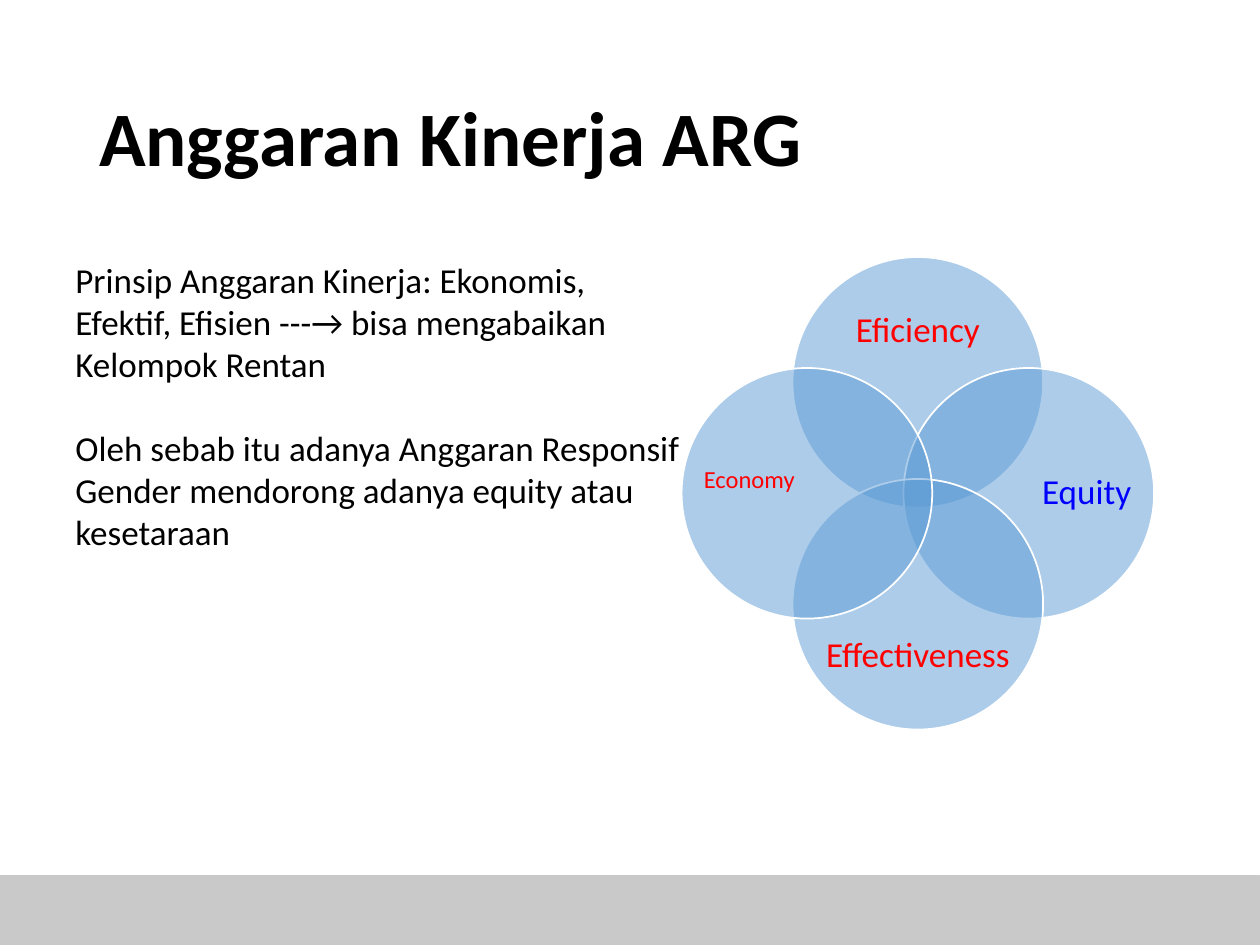
from pptx import Presentation
from pptx.util import Pt
from pptx.dml.color import RGBColor
from pptx.enum.shapes import MSO_SHAPE as Shape
from pptx.enum.text import MSO_ANCHOR as Anchor, PP_ALIGN as Align
from lxml.etree import SubElement


def paint(item, color):
    item.fill.solid()
    item.fill.fore_color.rgb = RGBColor.from_string(color)


def write(x, y, w, h, lines, size, color, anchor=Anchor.MIDDLE):
    box = slide.shapes.add_textbox(Pt(x), Pt(y), Pt(w), Pt(h))
    frame = box.text_frame
    frame.word_wrap = True
    frame.vertical_anchor = anchor
    frame.text = "\n".join(lines)
    for para in frame.paragraphs:
        para.font.name = "Calibri"
        para.font.size = Pt(size)
        paint(para.font, color)
    return frame


deck = Presentation()
deck.slide_width, deck.slide_height = Pt(720), Pt(540)
slide = deck.slides.add_slide(deck.slide_layouts[6])

mid_x, mid_y, step, size = 524.5, 281.9, 63.4, 143.2
circles = [
    ("Eficiency", 0, -1, 20, "FF0000", 0, -92.9, 110, 45),
    ("Equity", 1, 0, 20, "0000FF", 96.5, 0, 55.4, 110),
    ("Effectiveness", 0, 1, 20, "FF0000", 0, 92.9, 110, 45),
    ("Economy", -1, 0, 14, "FF0000", -96.3, -7.5, 55, 110),
]
for name, col, row, pts, color, dx, dy, w, h in circles:
    disc = slide.shapes.add_shape(
        Shape.OVAL, Pt(mid_x + col * step - size / 2),
        Pt(mid_y + row * step - size / 2), Pt(size), Pt(size))
    disc.shadow.inherit = False
    paint(disc, "5B9BD5")
    tint = disc.fill._xPr.find(".//{*}srgbClr")
    SubElement(tint, tint.tag.replace("srgbClr", "alpha"), val="50000")
    paint(disc.line, "FFFFFF")
    disc.line.width = Pt(1)
    frame = write(mid_x + dx - w / 2, mid_y + dy - h / 2, w, h, [name], pts, color)
    frame.margin_left = frame.margin_right = 0
    frame.margin_top = frame.margin_bottom = 0
    frame.paragraphs[0].alignment = Align.CENTER
    frame.paragraphs[0].line_spacing = 0.9

title = write(49.5, 28.8, 620.6, 104.4, ["Anggaran Kinerja ARG"], 44, "000000")
title.paragraphs[0].font.bold = True
title.paragraphs[0].line_spacing = 0.9

body = write(36, 144, 365.8, 200.9, [
    "Prinsip Anggaran Kinerja: Ekonomis,",
    "Efektif, Efisien ---→ bisa mengabaikan",
    "Kelompok Rentan",
    "Oleh sebab itu adanya Anggaran Responsif",
    "Gender mendorong adanya equity atau",
    "kesetaraan",
], 20, "000000", Anchor.TOP)
body.paragraphs[3].space_before = Pt(24)

band = slide.shapes.add_shape(Shape.RECTANGLE, 0, Pt(500.4), Pt(720), Pt(39.6))
band.shadow.inherit = False
paint(band, "C9C9C9")
paint(band.line, "C9C9C9")
band.line.width = Pt(0.5)

deck.save("out.pptx")
